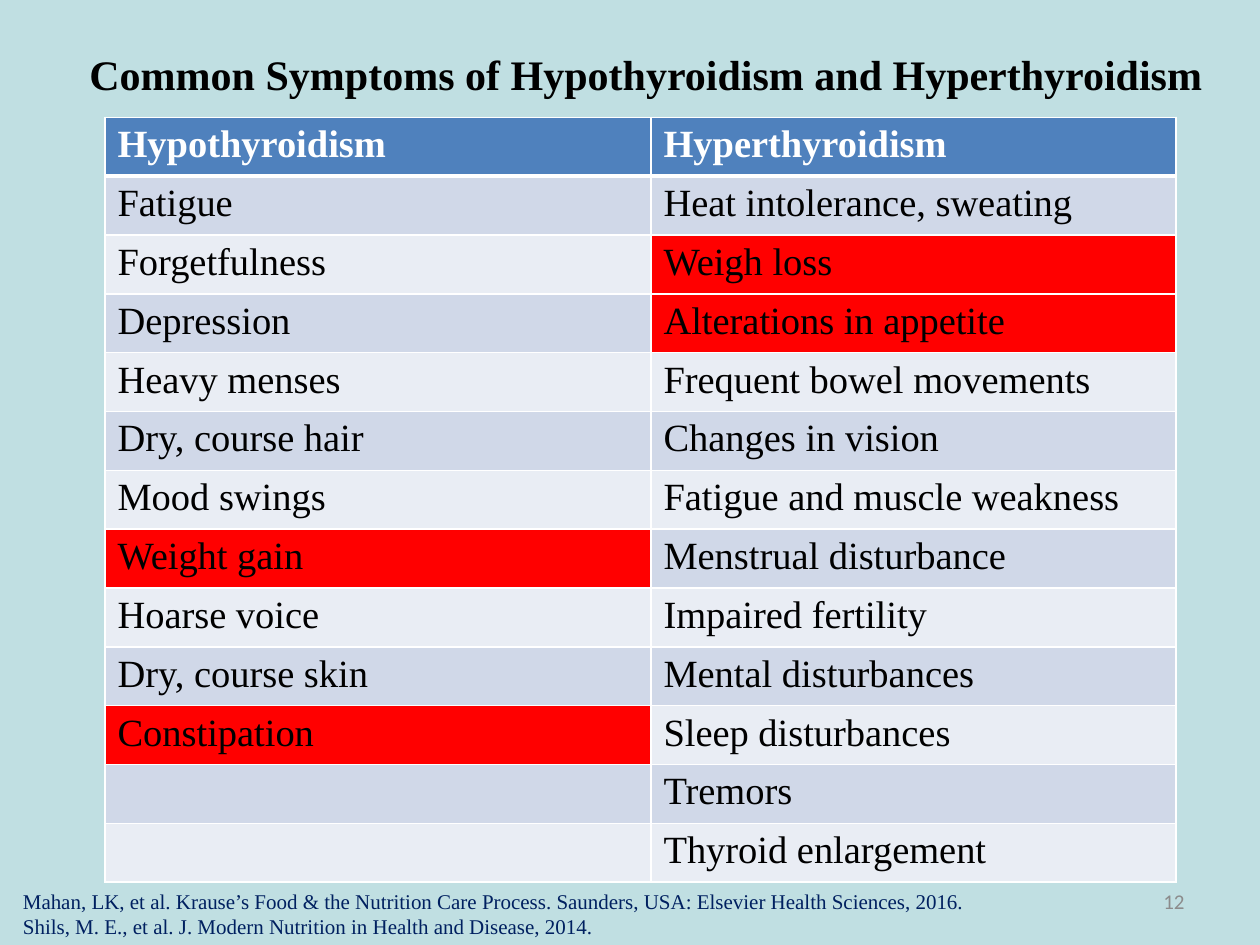
from lxml import etree
from pptx import Presentation
from pptx.dml.color import RGBColor
from pptx.enum.text import MSO_ANCHOR, PP_ALIGN
from pptx.oxml.ns import qn
from pptx.util import Pt

LEFT, CENTER, RIGHT = PP_ALIGN.LEFT, PP_ALIGN.CENTER, PP_ALIGN.RIGHT
TOP, MIDDLE = MSO_ANCHOR.TOP, MSO_ANCHOR.MIDDLE

BACKGROUND = RGBColor(0xC0, 0xDF, 0xE2)
BLACK = RGBColor(0, 0, 0)
WHITE = RGBColor(0xFF, 0xFF, 0xFF)
GRAY = RGBColor(0x8C, 0x8C, 0x8C)
NAVY = RGBColor(0, 0x20, 0x60)
HEADER_BLUE = RGBColor(0x4F, 0x81, 0xBD)
BAND_DARK = RGBColor(0xD0, 0xD8, 0xE8)
BAND_LIGHT = RGBColor(0xE9, 0xED, 0xF4)
RED = RGBColor(0xFF, 0, 0)

SERIF = "Times New Roman"
TITLE_FORMAT = {"name": SERIF, "size": Pt(24), "bold": True}
HEADER_FORMAT = {"name": SERIF, "size": Pt(22), "bold": True}
CELL_FORMAT = {"name": SERIF, "size": Pt(22), "bold": False}
SOURCE_FORMAT = {"name": SERIF, "size": Pt(12)}
NUMBER_FORMAT = {"name": "Calibri", "size": Pt(12)}

SYMPTOMS = [
    ("Hypothyroidism", "Hyperthyroidism"),
    ("Fatigue", "Heat intolerance, sweating"),
    ("Forgetfulness", "Weigh loss"),
    ("Depression", "Alterations in appetite"),
    ("Heavy menses", "Frequent bowel movements"),
    ("Dry, course hair", "Changes in vision"),
    ("Mood swings", "Fatigue and muscle weakness"),
    ("Weight gain", "Menstrual disturbance"),
    ("Hoarse voice", "Impaired fertility"),
    ("Dry, course skin", "Mental disturbances"),
    ("Constipation", "Sleep disturbances"),
    ("", "Tremors"),
    ("", "Thyroid enlargement"),
]
HIGHLIGHTED = {"Weigh loss", "Alterations in appetite", "Weight gain", "Constipation"}
SOURCES = [
    "Mahan, LK, et al. Krause’s Food & the Nutrition Care Process. "
    "Saunders, USA: Elsevier Health Sciences, 2016.",
    "Shils, M. E., et al. J. Modern Nutrition in Health and Disease, 2014.",
]


class SlideBuilder:
    def __init__(self, presentation):
        title_only = presentation.slide_layouts[5]
        self.slide = presentation.slides.add_slide(title_only)
        fill = self.slide.background.fill
        fill.solid()
        fill.fore_color.rgb = BACKGROUND

    def fill_frame(self, frame, lines, text_format, color, align=LEFT, anchor=TOP):
        frame.word_wrap = True
        frame.vertical_anchor = anchor
        for index, line in enumerate(lines):
            paragraph = frame.add_paragraph() if index else frame.paragraphs[0]
            paragraph.alignment = align
            run = paragraph.add_run()
            run.text = line
            for name, value in text_format.items():
                setattr(run.font, name, value)
            run.font.color.rgb = color

    def title(self, text, left, top, width, height):
        shape = self.slide.shapes.title
        shape.left, shape.top = Pt(left), Pt(top)
        shape.width, shape.height = Pt(width), Pt(height)
        self.fill_frame(shape.text_frame, [text], TITLE_FORMAT, BLACK, CENTER)

    def text(self, lines, left, top, width, height, text_format, color, **layout):
        shape = self.slide.shapes.add_textbox(Pt(left), Pt(top), Pt(width), Pt(height))
        self.fill_frame(shape.text_frame, lines, text_format, color, **layout)

    def border(self, cell, sides):
        properties = cell._tc.get_or_add_tcPr()
        for side, width in sides.items():
            line = etree.SubElement(properties, qn(f"a:ln{side}"), w=str(Pt(width)))
            fill = etree.SubElement(line, qn("a:solidFill"))
            etree.SubElement(fill, qn("a:srgbClr"), val=str(WHITE))

    def table(self, rows, left, top, column_widths, row_height):
        table = self.slide.shapes.add_table(
            len(rows), len(column_widths), Pt(left), Pt(top),
            Pt(sum(column_widths)), Pt(row_height * len(rows))).table
        for column, width in zip(table.columns, column_widths):
            column.width = Pt(width)
        for row_index, row in enumerate(rows):
            table.rows[row_index].height = Pt(row_height)
            is_header = row_index == 0
            band = BAND_DARK if row_index % 2 else BAND_LIGHT
            for column_index, text in enumerate(row):
                cell = table.cell(row_index, column_index)
                # The rule under the header row is thicker than the others
                self.border(cell, {"L": 1, "R": 1, "T": 3 if row_index == 1 else 1,
                                   "B": 3 if is_header else 1})
                cell.fill.solid()
                cell.fill.fore_color.rgb = (
                    HEADER_BLUE if is_header else RED if text in HIGHLIGHTED else band)
                if text:
                    self.fill_frame(cell.text_frame, [text],
                                    HEADER_FORMAT if is_header else CELL_FORMAT,
                                    WHITE if is_header else BLACK)


def main():
    presentation = Presentation()
    presentation.slide_width, presentation.slide_height = Pt(720), Pt(540)
    builder = SlideBuilder(presentation)

    # Slide number
    builder.text(["12"], 516, 500.5, 168, 28.75, NUMBER_FORMAT, GRAY,
                 align=RIGHT, anchor=MIDDLE)
    # Symptom comparison
    builder.table(SYMPTOMS, 60, 67, [312, 300], 33.35)
    # Title and sources
    builder.title("Common Symptoms of Hypothyroidism and Hyperthyroidism", 36, 24, 666, 36)
    builder.text(SOURCES, 6, 504, 648, 36, SOURCE_FORMAT, NAVY)

    presentation.save("out.pptx")


if __name__ == "__main__":
    main()
